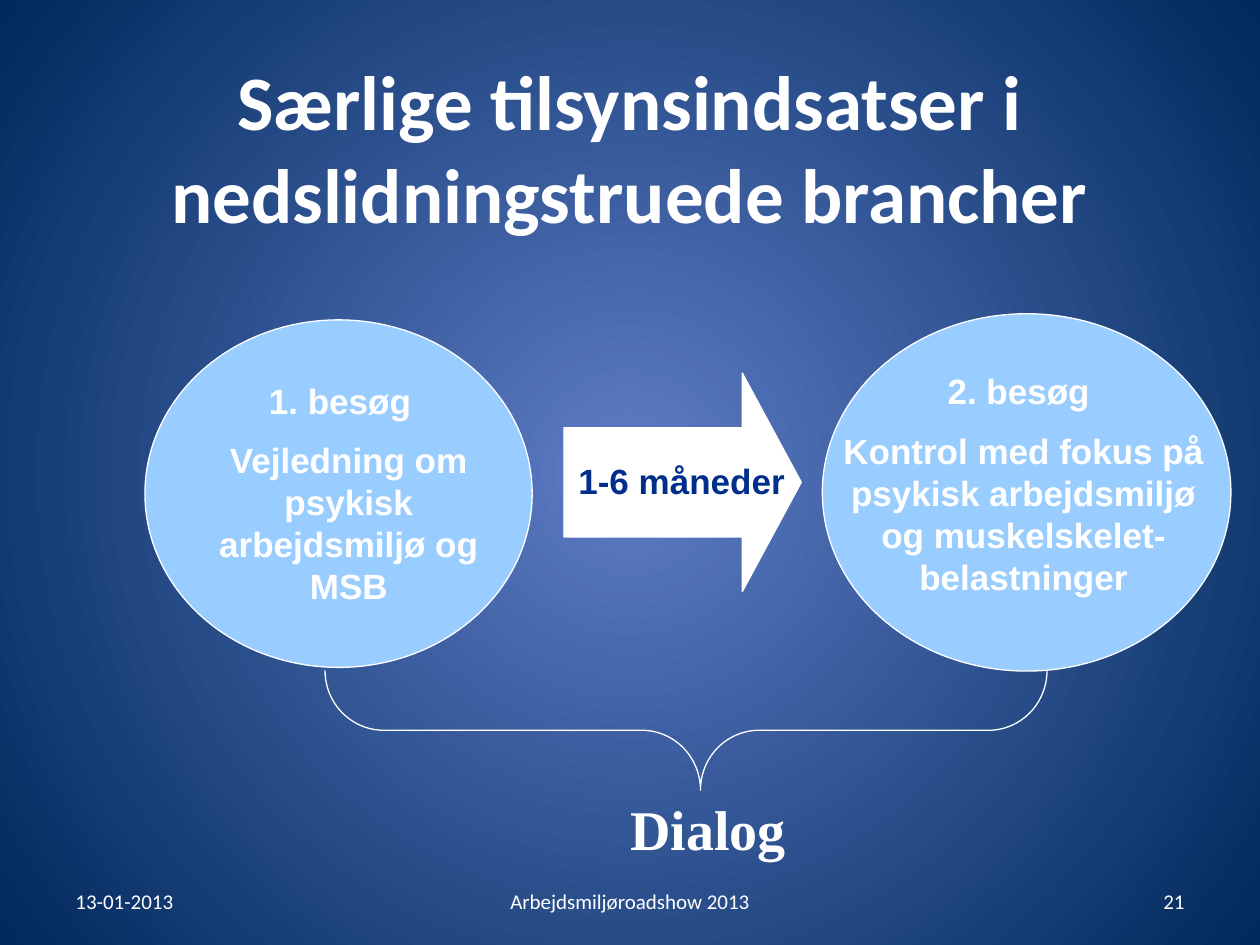
"""Build the slide on inspection visits in physically demanding trades."""
from dataclasses import dataclass

from lxml import etree
from pptx import Presentation
from pptx.dml.color import RGBColor
from pptx.enum.shapes import MSO_SHAPE
from pptx.enum.text import MSO_ANCHOR, PP_ALIGN
from pptx.oxml.ns import qn
from pptx.util import Pt

OVAL, ARROW, BRACE = MSO_SHAPE.OVAL, MSO_SHAPE.RIGHT_ARROW, MSO_SHAPE.RIGHT_BRACE
LEFT, CENTER, RIGHT = PP_ALIGN.LEFT, PP_ALIGN.CENTER, PP_ALIGN.RIGHT
TOP, MIDDLE = MSO_ANCHOR.TOP, MSO_ANCHOR.MIDDLE


@dataclass(frozen=True)
class Theme:
    """Colours, fonts and type sizes of the slide."""
    glow: str = "5E7CC5"
    night: str = "00295C"
    white: str = "FFFFFF"
    visit: str = "99CCFF"
    interval: str = "002E8A"
    heading_font: str = "Calibri"
    body_font: str = "Arial"
    dialog_font: str = "Times New Roman"
    title_size: int = 44
    dialog_size: int = 32
    body_size: int = 20
    footer_size: int = 12


THEME = Theme()


def rgb(code):
    """Turn a hex code into a colour."""
    return RGBColor.from_string(code)


def paint_background(slide):
    """Fill the background with a glow from the centre."""
    fill = slide.background.fill
    fill.gradient()
    for stop, code in zip(fill.gradient_stops, (THEME.glow, THEME.night)):
        stop.color.rgb = rgb(code)
    gradient = slide.background._cSld.find(".//" + qn("a:gradFill"))
    gradient.remove(gradient.find(qn("a:lin")))
    glow = etree.SubElement(gradient, qn("a:path"), path="circle")
    etree.SubElement(glow, qn("a:fillToRect"),
                     {side: "50000" for side in "ltrb"})


def add_text(slide, box, *lines, size=THEME.body_size, font=THEME.body_font,
             color=THEME.white, bold=True, align=CENTER, anchor=TOP, indents=()):
    """Add a wrapped text box with one paragraph for each line."""
    frame = slide.shapes.add_textbox(*map(Pt, box)).text_frame
    frame.word_wrap = True
    frame.vertical_anchor = anchor
    for index, line in enumerate(lines):
        paragraph = frame.paragraphs[0] if index == 0 else frame.add_paragraph()
        paragraph.alignment = align
        if index:
            paragraph.space_before = Pt(size / 2)
        if indents:
            paragraph._p.get_or_add_pPr().set("marL", str(Pt(indents[index])))
        run = paragraph.add_run()
        run.text = line
        run.font.name, run.font.size, run.font.bold = font, Pt(size), bold
        run.font.color.rgb = rgb(color)


def add_figure(slide, preset, box, fill=None, adjustments=(), rotation=0):
    """Add a preset shape with a thin white outline."""
    figure = slide.shapes.add_shape(preset, *map(Pt, box))
    figure.shadow.inherit = False
    figure.rotation = rotation
    for index, value in enumerate(adjustments):
        figure.adjustments[index] = value
    if fill:
        figure.fill.solid()
        figure.fill.fore_color.rgb = rgb(fill)
    else:
        figure.fill.background()
    figure.line.color.rgb = rgb(THEME.white)
    figure.line.width = Pt(0.75)


def add_footer(slide):
    """Add the date, the event and the slide number."""
    for left, width, text, align in (
            (36, 168, "13-01-2013", LEFT),
            (246, 228, "Arbejdsmiljøroadshow 2013", CENTER),
            (516, 168, "21", RIGHT)):
        add_text(slide, (left, 500.5, width, 28.75), text, bold=False, align=align,
                 size=THEME.footer_size, font=THEME.heading_font, anchor=MIDDLE)


def main():
    """Build and save the slide."""
    deck = Presentation()
    deck.slide_width, deck.slide_height = Pt(720), Pt(540)
    slide = deck.slides.add_slide(deck.slide_layouts[6])
    paint_background(slide)
    add_text(slide, (36, 21.6, 648, 124),
             "Særlige tilsynsindsatser i nedslidningstruede brancher",
             size=THEME.title_size, font=THEME.heading_font, anchor=MIDDLE)
    add_footer(slide)

    add_figure(slide, OVAL, (82.8, 182.8, 221.3, 198.6), THEME.visit)
    add_figure(slide, ARROW, (322.3, 213.2, 135.6, 124.8), THEME.white, (0.5, 0.27))
    add_figure(slide, OVAL, (469.9, 179.3, 233.5, 204.2), THEME.visit)
    add_text(slide, (89.3, 213.2, 193, 140.4), "1. besøg",
             "Vejledning om psykisk arbejdsmiljø og MSB", indents=(17, 27))
    add_text(slide, (318.5, 258.8, 142, 31), "1-6 måneder", color=THEME.interval)
    add_text(slide, (469.4, 207.6, 231, 140.4), "2. besøg ",
             "Kontrol med fokus på psykisk arbejdsmiljø og muskelskelet-belastninger")

    add_figure(slide, BRACE, (357.8, 211, 68.4, 412.6),
               adjustments=(0.49, 0.48), rotation=90)
    add_text(slide, (156, 450.7, 497.5, 45.4), "Dialog",
             size=THEME.dialog_size, font=THEME.dialog_font)
    deck.save("out.pptx")


if __name__ == "__main__":
    main()
